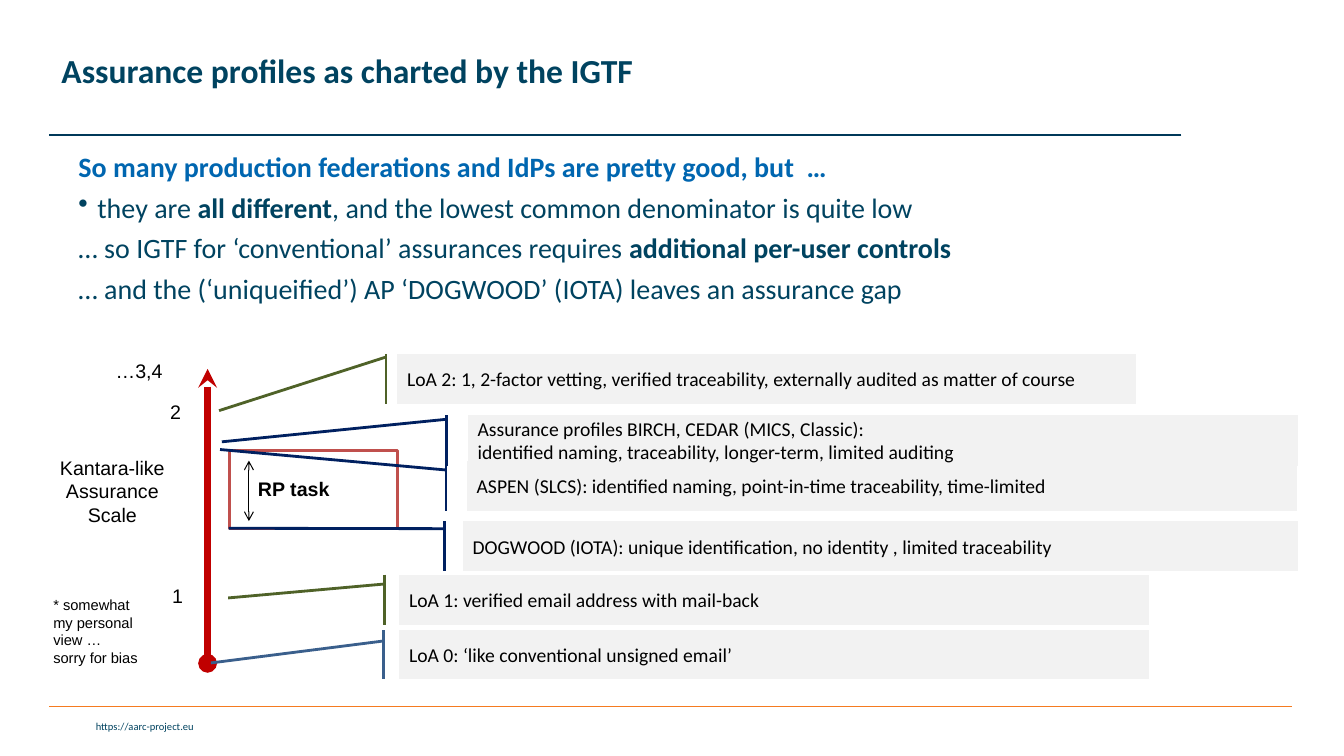
from pptx import Presentation
from pptx.dml.color import RGBColor
from pptx.enum.shapes import MSO_CONNECTOR, MSO_SHAPE
from pptx.enum.text import MSO_ANCHOR, PP_ALIGN
from pptx.oxml.ns import qn
from pptx.util import Pt
from lxml import etree

STRAIGHT = MSO_CONNECTOR.STRAIGHT
RECT = MSO_SHAPE.RECTANGLE
CALLOUT = MSO_SHAPE.LINE_CALLOUT_1_ACCENT_BAR
TOP, MIDDLE = MSO_ANCHOR.TOP, MSO_ANCHOR.MIDDLE
LEFT, CENTER, RIGHT = PP_ALIGN.LEFT, PP_ALIGN.CENTER, PP_ALIGN.RIGHT

BLACK = RGBColor(0x00, 0x00, 0x00)
WHITE = RGBColor(0xFF, 0xFF, 0xFF)
GRAY = RGBColor(0xF2, 0xF2, 0xF2)
TEAL = RGBColor(0x00, 0x43, 0x60)
DARK = RGBColor(0x00, 0x39, 0x59)
BLUE = RGBColor(0x00, 0x66, 0xB0)
ORANGE = RGBColor(0xF5, 0x7B, 0x20)
RED = RGBColor(0xC0, 0x00, 0x00)
ROSE = RGBColor(0xC0, 0x50, 0x4D)
STEEL = RGBColor(0x3A, 0x5F, 0x8C)
GREEN = RGBColor(0x4F, 0x62, 0x28)
NAVY = RGBColor(0x00, 0x20, 0x60)


class Board:
    sans, body = "Arial", "Calibri"

    def __init__(self, slide):
        self.slide = slide
        self.shapes = slide.shapes

    def add_runs(self, para, runs, size, color, font, align=LEFT):
        para.alignment = align
        for text, bold in runs:
            for row, part in enumerate(text.split("\n")):
                if row:
                    para.add_line_break()
                run = para.add_run()
                run.text = part
                run.font.size = Pt(size)
                run.font.name = font
                run.font.bold = bold
                run.font.color.rgb = color

    def title(self, box, text):
        shape = self.shapes.title
        shape.left, shape.top, shape.width, shape.height = map(Pt, box)
        frame = shape.text_frame
        frame.vertical_anchor = MIDDLE
        frame.paragraphs[0].line_spacing = 0.9
        self.add_runs(frame.paragraphs[0], [(text, True)], 24, TEAL, self.body)

    def label(self, box, text, size=14, font=sans, color=BLACK,
              align=LEFT, bold=False, wrap=False):
        frame = self.shapes.add_textbox(*map(Pt, box)).text_frame
        frame.word_wrap = wrap
        self.add_runs(frame.paragraphs[0], [(text, bold)], size, color, font, align)

    def points(self, box, items):
        frame = self.shapes.add_textbox(*map(Pt, box)).text_frame
        frame.word_wrap = True
        frame.vertical_anchor = TOP
        for row, (color, dot, runs) in enumerate(items):
            para = frame.add_paragraph() if row else frame.paragraphs[0]
            para.line_spacing = 0.9
            if row:
                para.space_before = Pt(7.5)
            if dot:
                props = para._p.get_or_add_pPr()
                props.set("marL", str(Pt(13.5)))
                props.set("indent", str(-Pt(13.5)))
                etree.SubElement(props, qn("a:buChar")).set("char", "•")
            self.add_runs(para, runs, 20, color, self.body)

    def line(self, start, end, color, width, head=None, tail=None):
        link = self.shapes.add_connector(STRAIGHT, *map(Pt, start + end))
        link.line.color.rgb = color
        link.line.width = Pt(width)
        props = link._element.spPr
        stroke = props.find(qn("a:ln"))
        for tag, kind in (("a:headEnd", head), ("a:tailEnd", tail)):
            if kind:
                etree.SubElement(stroke, qn(tag)).set("type", kind)
        etree.SubElement(props, qn("a:effectLst"))

    def shape(self, kind, box, fill, color):
        shape = self.shapes.add_shape(kind, *map(Pt, box))
        shape.shadow.inherit = False
        shape.fill.solid()
        shape.fill.fore_color.rgb = fill
        shape.line.color.rgb = color
        shape.line.width = Pt(2)
        return shape

    def callout(self, box, color, bends, text):
        shape = self.shape(CALLOUT, box, GRAY, color)
        for spot, bend in enumerate(bends):
            shape.adjustments[spot] = bend
        frame = shape.text_frame
        frame.word_wrap = True
        frame.vertical_anchor = MIDDLE
        self.add_runs(frame.paragraphs[0], [(text, False)], 14, BLACK, self.body)


def main():
    deck = Presentation()
    deck.slide_width, deck.slide_height = Pt(960), Pt(540)
    board = Board(deck.slides.add_slide(deck.slide_layouts[5]))

    board.line((35.3, 504.7), (923, 504.7), ORANGE, 1)
    board.label((2.2, 510.5, 143.3, 16.6), "https://aarc-project.eu", 7.5,
                board.body, TEAL, RIGHT, wrap=True)
    board.line((843.8, 96.5), (35.3, 96.5), DARK, 1)
    board.title((36.7, 15.8, 712, 72.7), "Assurance profiles as charted by the IGTF")
    board.points((49, 105.8, 884, 129), [
        (BLUE, False, [
            ("So many production federations and IdPs are pretty good, but  …", True)]),
        (TEAL, True, [
            ("they are ", False), ("all different", True),
            (", and the lowest common denominator is quite low", False)]),
        (TEAL, False, [
            ("… so IGTF for ‘conventional’ assurances requires ", False),
            ("additional per-user controls", True)]),
        (TEAL, False, [
            ("… and the (‘uniqueified’) AP ‘DOGWOOD’ (IOTA) leaves an assurance gap",
             False)]),
    ])

    board.shape(RECT, (163.7, 322, 120.2, 55.6), WHITE, ROSE)
    board.line((148.3, 263.5), (148.3, 473.8), RED, 4.5, "stealth", "oval")
    board.label((35.3, 322, 90, 58.3), "Kantara-like\nAssurance\nScale", align=CENTER)

    for box, color, bends, text in [
        ((285.1, 450, 535.7, 35.3), STEEL, (0.223, -0.021, 0.667, -0.251),
         "LoA 0: ‘like conventional unsigned email’"),
        ((285.1, 410.4, 535.7, 36), GREEN, (0.188, -0.019, 0.465, -0.228),
         "LoA 1: verified email address with mail-back"),
        ((330.5, 372.2, 596.9, 36), NAVY, (0.152, -0.022, 0.144, -0.28),
         "DOGWOOD (IOTA): unique identification, no identity , limited traceability"),
        ((333.4, 329, 593.3, 36), NAVY, (0.188, -0.025, -0.219, -0.297),
         "ASPEN (SLCS): identified naming, point-in-time traceability, time-limited"),
        ((334.1, 296.6, 593.3, 36), NAVY, (0.082, -0.026, 0.529, -0.296),
         "Assurance profiles BIRCH, CEDAR (MICS, Classic):\n"
         "identified naming, traceability, longer-term, limited auditing"),
        ((283.7, 252.7, 527.8, 36), GREEN, (0.065, -0.015, 1.129, -0.241),
         "LoA 2: 1, 2-factor vetting, verified traceability, "
         "externally audited as matter of course"),
    ]:
        board.callout(box, color, bends, text)

    board.label((31, 422, 75.6, 58.3),
                "* somewhat\nmy personal\nview …\nsorry for bias", 10.5)
    for left, top, width, mark in [(115.9, 413.3, 22.3, "1"),
                                   (114.5, 282.2, 22.3, "2"),
                                   (75.6, 252.7, 48.2, "…3,4")]:
        board.label((left, top, width, 24.5), mark)
    board.line((177.8, 329), (177.8, 372.2), BLACK, 0.75, "arrow", "arrow")
    board.label((177.1, 337, 66.2, 24.5), "RP task", bold=True)

    deck.save("out.pptx")


if __name__ == "__main__":
    main()
